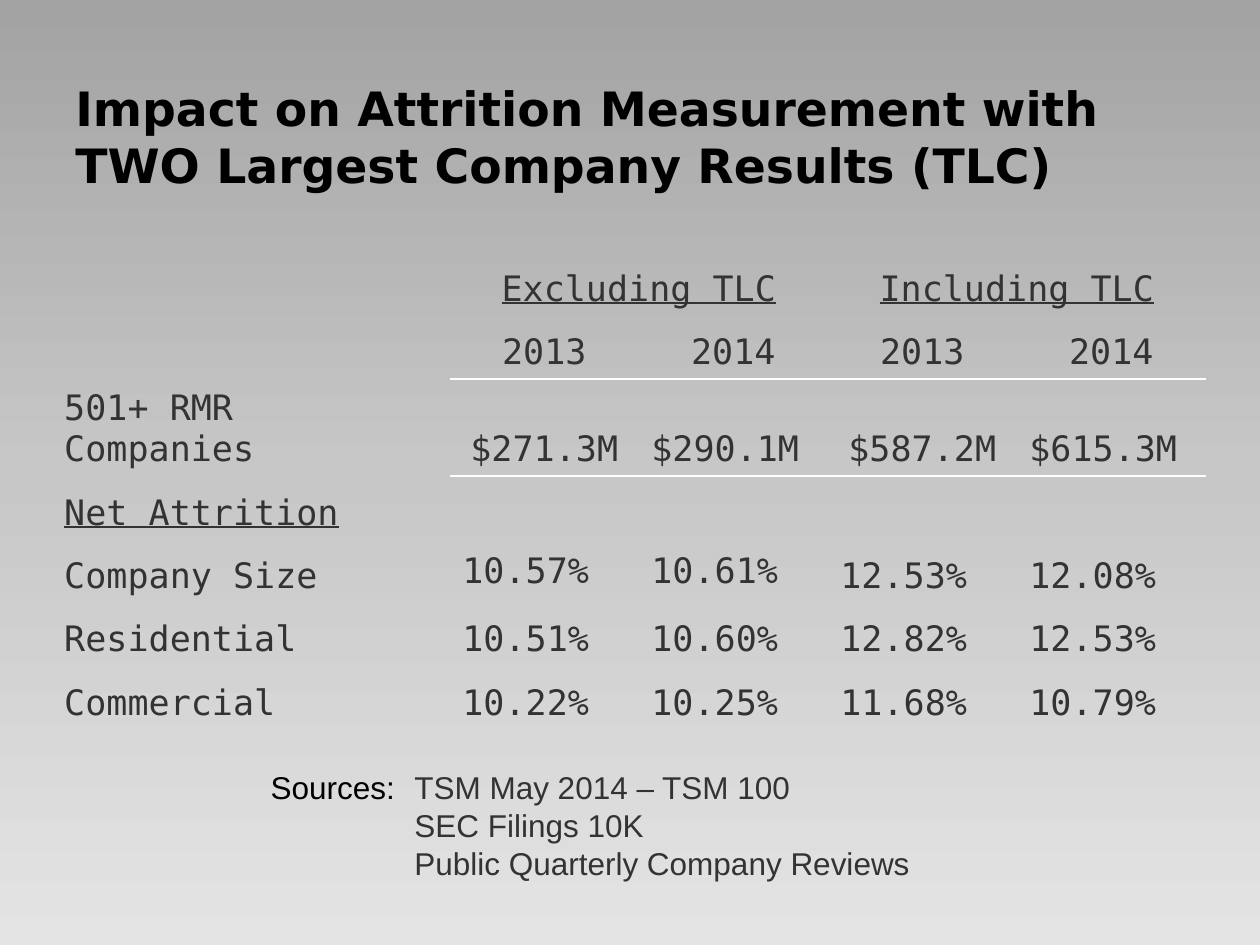
from copy import deepcopy
from lxml import etree
from pptx import Presentation
from pptx import util as u
from pptx.dml.color import RGBColor
from pptx.enum import text as t
from pptx.oxml.ns import qn

MONO = "DejaVu Sans Mono"
GREY = "333333"
PLAIN = "{2D5ABB26-0587-4C30-8999-92F81FD0307C}"  # no style, no grid
LOW, MID = t.MSO_ANCHOR.BOTTOM, t.MSO_ANCHOR.MIDDLE

HEADS = ["Excluding TLC", "Including TLC"]
YEARS = ["2013", "2014"] * 2
ROWS = [
    ["501+ RMR Companies", "$271.3M", "$290.1M", "$587.2M", "$615.3M"],
    ["Net Attrition", "", "", "", ""],
    ["Company Size", "10.57%", "10.61%", "12.53%", "12.08%"],
    ["Residential", "10.51%", "10.60%", "12.82%", "12.53%"],
    ["Commercial", "10.22%", "10.25%", "11.68%", "10.79%"],
]
SOURCES = ["TSM May 2014 – TSM 100", "SEC Filings 10K",
           "Public Quarterly Company Reviews"]


def color(code):
    return RGBColor.from_string(code)


def add_run(para, words, size, face, code, bold=False, under=False):
    run = para.add_run()
    run.text = words
    font = run.font
    font.size, font.name, font.bold = u.Pt(size), face, bold
    font.underline = under
    font.color.rgb = color(code)


def add_box(slide, box):
    frame = slide.shapes.add_textbox(*map(u.Inches, box)).text_frame
    frame.word_wrap = True
    return frame


def paint(slide):
    fill = slide.background.fill
    fill.gradient()
    fill.gradient_angle = 270
    first = fill.gradient_stops[0]._gs
    first.addnext(deepcopy(first))
    shades = [(0, "A3A3A3"), (0.5, "C7C7C7"), (1, "E4E4E4")]
    for stop, (place, code) in zip(fill.gradient_stops, shades):
        stop.position = place
        stop.color.rgb = color(code)


def add_title(slide, box):
    frame = add_box(slide, box)
    frame.vertical_anchor = LOW
    add_run(frame.paragraphs[0], "Impact on Attrition Measurement with "
            "TWO Largest Company Results (TLC)", 27, "DejaVu Sans",
            "000000", bold=True)


def rule(cell, side):
    """Draw a thin white line on one side of a cell."""
    props = cell._tc.get_or_add_tcPr()
    line = etree.Element(qn("a:" + side), w=str(u.Pt(1)))
    fill = etree.SubElement(line, qn("a:solidFill"))
    etree.SubElement(fill, qn("a:srgbClr"), val="FFFFFF")
    props.insert(0, line)


def fill_cell(cell, words, center=False, space=False, under=False, anchor=LOW):
    cell.fill.background()
    cell.vertical_anchor = anchor
    if not words:
        return
    para = cell.text_frame.paragraphs[0]
    if center:
        para.alignment = t.PP_ALIGN.CENTER
    if space:
        para.space_before = u.Pt(4)
    add_run(para, words, 20, MONO, GREY, under=under)


def add_grid(slide, box):
    grid = slide.shapes.add_table(7, 5, *map(u.Inches, box)).table
    grid.first_row = grid.horz_banding = False
    grid._tbl.tblPr.find(qn("a:tableStyleId")).text = PLAIN
    for col, wide in zip(grid.columns, [3.16] + [1.5] * 4):
        col.width = u.Inches(wide)
    for row, high in zip(grid.rows, [0.67, 0.5, 0.5, 0.51, 0.5, 0.5, 0.51]):
        row.height = u.Inches(high)

    # Column heads
    for i, head in enumerate(HEADS):
        cell = grid.cell(0, 1 + 2 * i)
        cell.merge(grid.cell(0, 2 + 2 * i))
        fill_cell(cell, head, center=True, space=True, under=True)
    for c, year in enumerate(YEARS, 1):
        fill_cell(grid.cell(1, c), year, center=True, space=True)
        rule(grid.cell(1, c), "lnB")
        rule(grid.cell(2, c), "lnT")

    # Body: sums for 2013 are centred, rates start at the left
    for r, row in enumerate(ROWS, 2):
        for c, words in enumerate(row):
            mid = r == 2 and c in (1, 3)
            fill_cell(grid.cell(r, c), words, center=mid,
                      space=c == 0 or mid, under=words == "Net Attrition",
                      anchor=MID if r == 4 and c in (1, 2) else LOW)


def add_sources(slide, box):
    frame = add_box(slide, box)
    indent = u.Inches(1.14)
    for i, source in enumerate(SOURCES):
        para = frame.add_paragraph() if i else frame.paragraphs[0]
        props = para._p.get_or_add_pPr()
        props.set("marL", str(indent))
        props.set("indent", str(0 if i else -indent))
        if i == 0:
            add_run(para, "Sources:\t", 18, "Arial", "000000")
        add_run(para, source, 18, "Arial", GREY)


def main():
    deck = Presentation()
    deck.slide_width, deck.slide_height = u.Inches(10), u.Inches(7.5)
    slide = deck.slides.add_slide(deck.slide_layouts[6])
    paint(slide)
    add_title(slide, (0.5, 0.33, 9, 1.25))
    add_grid(slide, (0.41, 1.84, 9.16, 3.69))
    add_sources(slide, (2.05, 6.05, 7.22, 1))
    deck.save("out.pptx")


if __name__ == "__main__":
    main()
